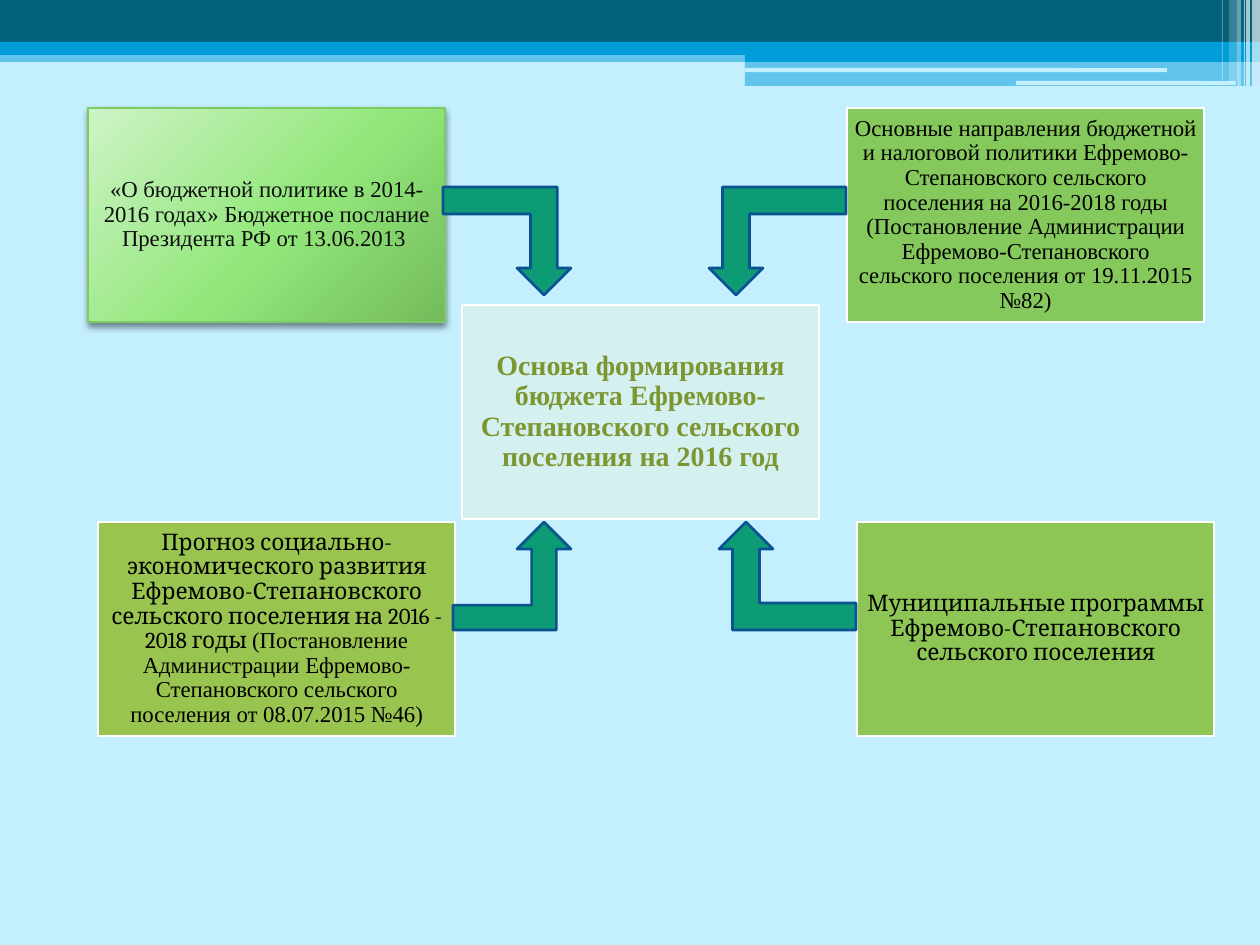
from lxml import etree
from pptx import Presentation
from pptx.dml.color import RGBColor
from pptx.enum.shapes import MSO_SHAPE
from pptx.enum.text import MSO_ANCHOR, PP_ALIGN
from pptx.oxml import parse_xml
from pptx.oxml.ns import nsdecls, qn
from pptx.util import Emu, Inches, Pt

RECT = MSO_SHAPE.RECTANGLE
ROUND = MSO_SHAPE.ROUNDED_RECTANGLE
BENT_ARROW = MSO_SHAPE.BENT_UP_ARROW
MIDDLE = MSO_ANCHOR.MIDDLE
CENTER = PP_ALIGN.CENTER

PX_PER_INCH = 126
BOX_W, BOX_H = 357, 214
TOP_Y, CENTER_Y, BOTTOM_Y = 108, 305, 522
SERIF, CAMBRIA = "Times New Roman", "Cambria"
BACKGROUND, BLUE, DARK_TEAL, WHITE = "C4EFFF", "009DD9", "04617B", "FFFFFF"

# left, top, width, height, colour, opacity in percent, preset
HEADER_BARS = [
    (0, 50, 1260, 12, BLUE, 50, RECT),
    (0, 0, 1260, 42, DARK_TEAL, 100, RECT),
    (0, 42, 1260, 13, BLUE, 100, RECT),
    (745, 49, 515, 13, BLUE, 100, RECT),
    (745, 60, 515, 26, BLUE, 50, RECT),
    (745, 68, 422, 4, BACKGROUND, 100, ROUND),
    (1016, 81, 220, 4, BACKGROUND, 100, ROUND),
]

# left, width, height, opacity in percent
HEADER_STRIPES = [
    (1252, 8, 86, 65), (1246, 4, 86, 65), (1244, 1, 86, 60),
    (1237, 4, 86, 40), (1229, 8, 81, 20), (1222, 1, 81, 30),
]

# left, top, fill, opacity, text inset, runs of (text, format)
SERIF_13 = {"name": SERIF, "size": Pt(13)}
CAMBRIA_13 = {"name": CAMBRIA, "size": Pt(13)}
TITLE = {"name": SERIF, "size": Pt(16), "bold": True}
ADDRESS = (88, TOP_Y, "92E77B", 100, 0.05, "0D0D0D", [
    ("«О бюджетной политике в 2014-2016 годах» Бюджетное послание "
     "Президента РФ от 13.06.2013 ", SERIF_13)])
OTHER_BOXES = [
    (847, TOP_Y, "85C85C", 100, 0.05, "000000", [
        ("Основные направления бюджетной и налоговой политики "
         "Ефремово-Степановского сельского поселения на 2016-2018 годы "
         "(Постановление Администрации Ефремово-Степановского сельского "
         "поселения от 19.11.2015 №82)", SERIF_13)]),
    (857, BOTTOM_Y, "8EC656", 100, 0.05, "000000", [
        ("Муниципальные программы Ефремово-Степановского сельского "
         "поселения", CAMBRIA_13)]),
    (98, BOTTOM_Y, "99C44F", 100, 0.05, "000000", [
        ("Прогноз социально-экономического развития Ефремово-Степановского "
         "сельского поселения на 2016 - 2018 годы ", CAMBRIA_13),
        ("(Постановление Администрации Ефремово-Степановского сельского "
         "поселения от 08.07.2015 №46)", SERIF_13)]),
    (462, CENTER_Y, "E5F4E0", 50, 0.07, "7E9632", [
        ("Основа формирования бюджета Ефремово-Степановского сельского "
         "поселения на 2016 год", TITLE)]),
]

# left, top, width, rotation, flip attribute
ARROW_H = 108
ARROWS = [
    (453, BOTTOM_Y, 118, 0, None),
    (719, BOTTOM_Y, 137, 180, "flipV"),
    (443, 187, 128, 180, "flipH"),
    (709, 187, 137, 180, None),
]


def px(length):
    return Emu(round(length * 914400 / PX_PER_INCH))


def color(value):
    return RGBColor.from_string(value)


def add_block(slide, preset, place, fill, opacity=100, line=None, line_pt=1.5):
    block = slide.shapes.add_shape(preset, *map(px, place))
    block.shadow.inherit = False
    block.fill.solid()
    block.fill.fore_color.rgb = color(fill)
    if opacity < 100:
        tint = block._element.spPr.find(".//" + qn("a:srgbClr"))
        etree.SubElement(tint, qn("a:alpha"), val=str(opacity * 1000))
    if line:
        block.line.color.rgb = color(line)
        block.line.width = Pt(line_pt)
    else:
        block.line.fill.background()
    return block


def add_text_box(slide, left, top, fill, opacity, inset, text_color, runs,
                 line=WHITE, line_pt=1.5):
    box = add_block(slide, RECT, (left, top, BOX_W, BOX_H), fill, opacity,
                    line, line_pt)
    frame = box.text_frame
    frame_format = {"word_wrap": True, "vertical_anchor": MIDDLE}
    for side in ("left", "top", "right", "bottom"):
        frame_format["margin_" + side] = Inches(inset)
    for name, value in frame_format.items():
        setattr(frame, name, value)
    paragraph = frame.paragraphs[0]
    paragraph.alignment = CENTER
    paragraph.line_spacing = 0.9
    for text, font_format in runs:
        run = paragraph.add_run()
        run.text = text
        run.font.color.rgb = color(text_color)
        for name, value in font_format.items():
            setattr(run.font, name, value)
    return box


def add_glow_and_shadow(box):
    """Radial gradient fill and a soft shadow below the box."""
    properties = box._element.spPr
    stops = "".join(
        f'<a:gs pos="{position * 1000}"><a:srgbClr val="{tone}"/></a:gs>'
        for position, tone in ((0, "CEF3C6"), (55, "92E77B"), (100, "74BC5B")))
    gradient = parse_xml(
        f'<a:gradFill {nsdecls("a")} rotWithShape="1"><a:gsLst>{stops}</a:gsLst>'
        '<a:path path="circle"><a:fillToRect l="-40000" t="-90000" '
        'r="140000" b="190000"/></a:path></a:gradFill>')
    properties.replace(properties.find(qn("a:solidFill")), gradient)
    properties.find(qn("a:effectLst")).append(parse_xml(
        f'<a:outerShdw {nsdecls("a")} blurRad="{Pt(4)}" dist="{Pt(2)}" '
        'dir="5400000" rotWithShape="0"><a:srgbClr val="000000">'
        '<a:alpha val="45000"/></a:srgbClr></a:outerShdw>'))


def add_arrow(slide, left, top, width, rotation, flip):
    arrow = add_block(slide, BENT_ARROW, (left, top, width, ARROW_H),
                      "0C9B74", line="0B5292")
    arrow.rotation = rotation
    if flip:
        arrow._element.spPr.find(qn("a:xfrm")).set(flip, "1")
    return arrow


def main():
    deck = Presentation()
    deck.slide_width, deck.slide_height = Inches(10), Inches(7.5)
    slide = deck.slides.add_slide(deck.slide_layouts[6])
    slide.background.fill.solid()
    slide.background.fill.fore_color.rgb = color(BACKGROUND)

    # Header band
    for *place, fill, opacity, preset in HEADER_BARS:
        add_block(slide, preset, place, fill, opacity)
    for left, width, height, opacity in HEADER_STRIPES:
        add_block(slide, RECT, (left, 0, width, height), WHITE, opacity)

    # Source documents and the central box
    address = add_text_box(slide, *ADDRESS, line="7CCA62", line_pt=0.75)
    add_glow_and_shadow(address)
    for box in OTHER_BOXES:
        add_text_box(slide, *box)

    # Arrows towards the centre
    for number, arrow_data in enumerate(ARROWS):
        arrow = add_arrow(slide, *arrow_data)
        if number == 0:
            arrow.adjustments[0] = 0.23

    deck.save("out.pptx")


if __name__ == "__main__":
    main()
